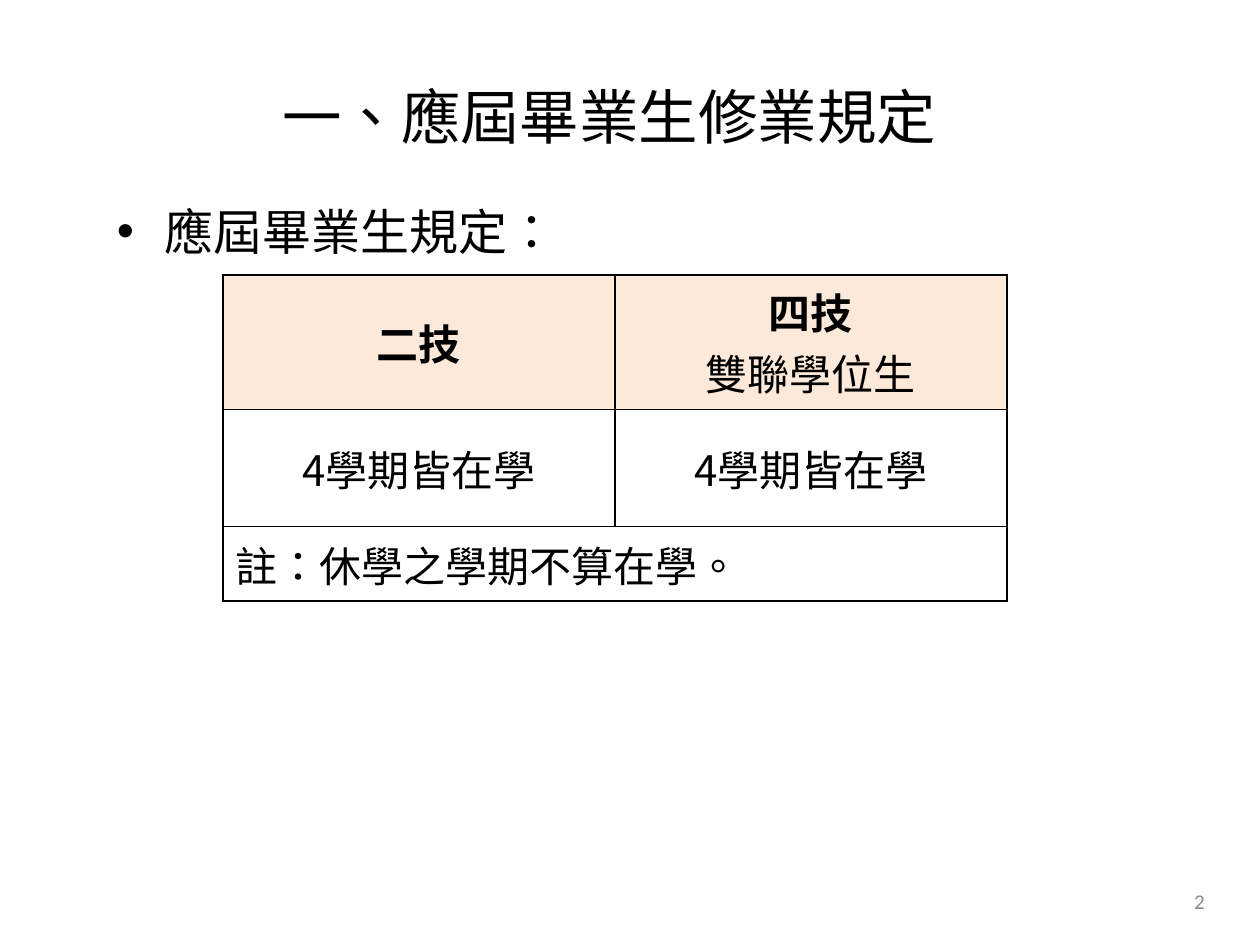
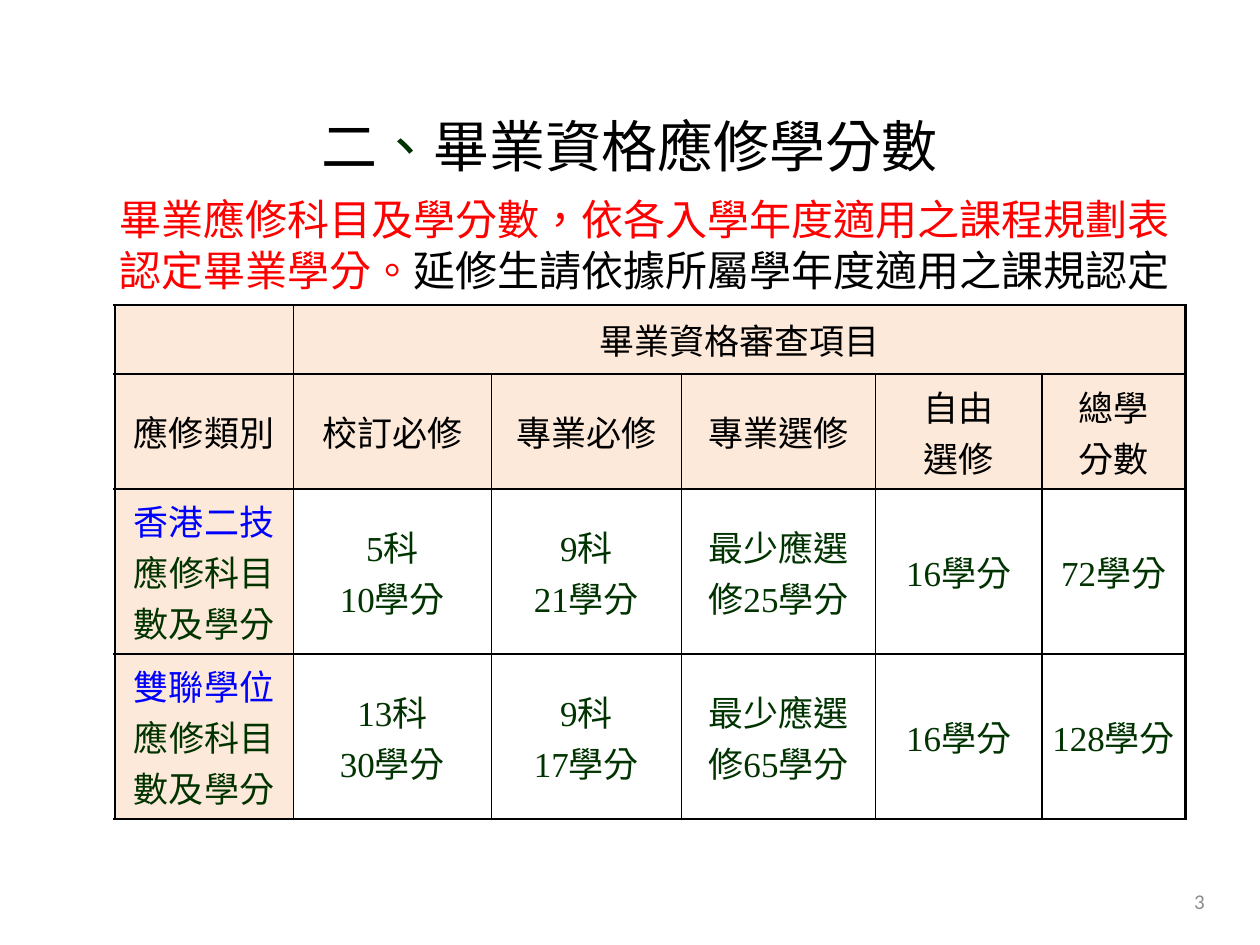
"""Build two slides on graduation rules and required credits."""
from collections import namedtuple
from dataclasses import dataclass

from lxml import etree
from pptx import Presentation
from pptx import util as u
from pptx.dml.color import RGBColor
from pptx.enum import text
from pptx.oxml.ns import qn

Style = namedtuple("Style", "size color font bold", defaults=(False,))
PP = text.PP_ALIGN
ANCHOR = text.MSO_ANCHOR


@dataclass(frozen=True)
class Theme:
    """Colours, fonts and type sizes shared by the slides."""
    black: str = "000000"
    green: str = "003300"
    blue: str = "0000FF"
    red: str = "FF0000"
    grey: str = "8C8C8C"
    header: str = "FDE9D9"
    jp: str = "Noto Sans CJK JP"
    sc: str = "Noto Sans CJK SC"
    serif: str = "Times New Roman"
    sans: str = "Calibri"
    title: int = 34
    title_small: int = 32
    bullet: int = 28
    body: int = 24
    grid: int = 20
    footer: int = 12
    thin: float = 1
    thick: float = 1.5


T = Theme()
RULE = Style(T.body, T.black, T.sc)
RULE_HEAD = RULE._replace(bold=True)
GRID_HEAD = Style(T.grid, T.black, T.serif)
GRID = GRID_HEAD._replace(color=T.green)
GROUP = Style(T.grid, T.blue, T.jp)


def add_run(p, content, style):
    """Add one styled run with matching East Asian font."""
    r = p.add_run()
    r.text = content
    f = r.font
    f.size, f.bold, f.name = u.Pt(style.size), style.bold, style.font
    f.color.rgb = RGBColor.from_string(style.color)
    rpr = f._element
    rpr.set("lang", "zh-TW")
    ea = etree.SubElement(rpr, qn("a:ea"))
    ea.set("typeface", style.font if style.font in (T.jp, T.sc) else T.jp)


def fill_text(tf, paragraphs, align=PP.CENTER, spacing=None):
    """Write paragraphs, each a list of (text, style) runs."""
    for i, runs in enumerate(paragraphs):
        p = tf.paragraphs[0] if i == 0 else tf.add_paragraph()
        p.alignment = align
        if spacing:
            p.line_spacing = u.Pt(spacing)
        for content, style in runs:
            add_run(p, content, style)


def add_text(s, box, paragraphs, align=PP.LEFT, anchor=ANCHOR.MIDDLE, spacing=None):
    """Add a wrapping text box and return its text frame."""
    tf = s.shapes.add_textbox(*map(u.Inches, box)).text_frame
    tf.word_wrap = True
    tf.vertical_anchor = anchor
    fill_text(tf, paragraphs, align, spacing)
    return tf


def add_bullet(tf, indent):
    """Give the first paragraph a hanging round bullet."""
    ppr = tf.paragraphs[0]._p.get_or_add_pPr()
    ppr.set("marL", str(u.Inches(indent)))
    ppr.set("indent", str(-u.Inches(indent)))
    etree.SubElement(ppr, qn("a:buFont")).set("typeface", "Arial")
    etree.SubElement(ppr, qn("a:buChar")).set("char", "•")


def set_borders(cell, widths):
    """Draw black left, right, top and bottom borders."""
    tcpr = cell._tc.get_or_add_tcPr()
    for i, (side, width) in enumerate(zip("LRTB", widths)):
        ln = etree.Element(qn(f"a:ln{side}"), w=str(u.Pt(width)))
        solid = etree.SubElement(ln, qn("a:solidFill"))
        etree.SubElement(solid, qn("a:srgbClr"), val=T.black)
        tcpr.insert(i, ln)


def add_table(s, left, top, widths, heights, rows, shaded, merged, bottom):
    """Add a bordered table; the merged cell spans to the end of its row."""
    box = (left, top, sum(widths), sum(heights))
    table = s.shapes.add_table(len(heights), len(widths), *map(u.Inches, box)).table
    table.first_row = table.horz_banding = False
    for column, width in zip(table.columns, widths):
        column.width = u.Inches(width)
    for row, height in zip(table.rows, heights):
        row.height = u.Inches(height)
    last_row, last_col = len(heights) - 1, len(widths) - 1
    for i, row in enumerate(rows):
        for j, paragraphs in enumerate(row):
            cell = table.cell(i, j)
            cell.vertical_anchor = ANCHOR.MIDDLE
            if shaded(i, j):
                cell.fill.solid()
                cell.fill.fore_color.rgb = RGBColor.from_string(T.header)
            else:
                cell.fill.background()
            at_right = j == last_col or (i, j) == merged
            set_borders(cell, (T.thick if j == 0 else T.thin,
                               T.thick if at_right else T.thin,
                               T.thick if i == 0 else T.thin,
                               bottom if i == last_row else T.thin))
            fill_text(cell.text_frame, paragraphs)
    table.cell(*merged).merge(table.cell(merged[0], last_col))
    return table


def lines(style, *contents):
    """Return one single-run paragraph per line of text."""
    return [[(content, style)] for content in contents]


def add_slide(prs, number):
    """Add a blank slide with its page number."""
    s = prs.slides.add_slide(prs.slide_layouts[6])
    add_text(s, (7.33, 6.95, 2.33, 0.4),
             lines(Style(T.footer, T.grey, T.sans), str(number)), PP.RIGHT)
    return s


def build_rules(prs):
    """Build the slide on enrolment rules."""
    s = add_slide(prs, 2)
    add_text(s, (0, 0.29, 9.67, 1.25),
             lines(Style(T.title, T.black, T.jp), "一、應屆畢業生修業規定"), PP.CENTER)
    tf = add_text(s, (0.83, 1.55, 8.83, 3.86),
                  lines(Style(T.bullet, T.black, T.sc), "應屆畢業生規定："),
                  anchor=ANCHOR.TOP)
    add_bullet(tf, 0.38)
    enrolled = lines(RULE, "4學期皆在學")
    rows = [
        [lines(RULE_HEAD, "二技"), lines(RULE_HEAD, "四技") + lines(RULE, "雙聯學位生")],
        [enrolled, enrolled],
        [lines(RULE, "註：休學之學期不算在學。"), []],
    ]
    table = add_table(s, 1.77, 2.18, [3.11] * 2, [1.07, 0.93, 0.59], rows,
                      lambda i, j: i == 0, (2, 0), T.thick)
    table.cell(2, 0).text_frame.paragraphs[0].alignment = PP.LEFT


def credit_row(group, required, major, elective, free, total):
    """Return the cells of one programme's credit requirements."""
    return [lines(GROUP, group) + lines(GRID, "應修科目數及學分"),
            lines(GRID, *required), lines(GRID, *major),
            lines(GRID, f"最少應選修{elective}學分"),
            lines(GRID, f"{free}學分"), lines(GRID, f"{total}學分")]


def build_credits(prs):
    """Build the slide on required credits."""
    s = add_slide(prs, 3)
    title = Style(T.title_small, T.black, T.jp)
    add_text(s, (0, 0.53, 10, 1.01),
             [[("二", title), ("、", title._replace(color=T.green)),
               ("畢業資格應修學分數", title)]], PP.CENTER, spacing=55)
    headings = [["應修類別"], ["校訂必修"], ["專業必修"], ["專業選修"],
                ["自由", "選修"], ["總學", "分數"]]
    rows = [
        [[], lines(GRID_HEAD, "畢業資格審查項目"), [], [], [], []],
        [lines(GRID_HEAD, *heading) for heading in headings],
        credit_row("香港二技", ("5科", "10學分"), ("9科", "21學分"), 25, 16, 72),
        credit_row("雙聯學位", ("13科", "30學分"), ("9科", "17學分"), 65, 16, 128),
    ]
    table = add_table(s, 0.91, 2.42, [1.42, 1.57, 1.51, 1.54, 1.32, 1.14],
                      [0.55, 0.91, 1.31, 1.31], rows,
                      lambda i, j: i < 2 or j == 0, (0, 1), T.thin)
    for i in range(1, 4):
        total = table.cell(i, 5)
        total.margin_left = total.margin_right = 0
        total.margin_top = total.margin_bottom = 0
    red = RULE._replace(color=T.red)
    tf = add_text(s, (0.85, 1.39, 8.66, 1.5),
                  [[("畢業應修科目及學分數，依各入學年度適用之課程規劃表", red)],
                   [("認定畢業學分。", red),
                    ("延修生請依據所屬學年度適用之課規認定", RULE)]], spacing=29)
    tf.margin_bottom = u.Inches(0.45)


def main():
    """Create and save the presentation."""
    prs = Presentation()
    prs.slide_width, prs.slide_height = u.Inches(10), u.Inches(7.5)
    build_rules(prs)
    build_credits(prs)
    prs.save("out.pptx")


if __name__ == "__main__":
    main()
